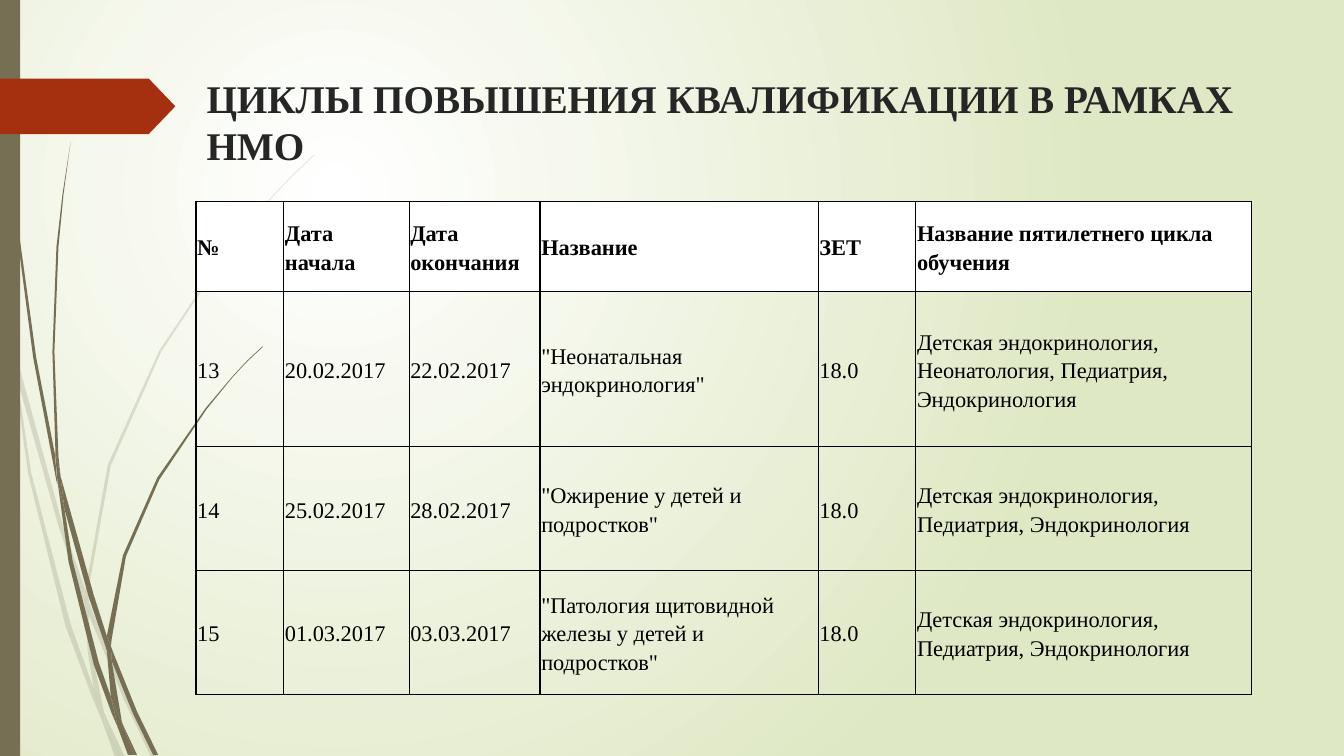
from dataclasses import dataclass
from lxml.etree import SubElement
from pptx import Presentation
from pptx.dml.color import RGBColor
from pptx.enum.shapes import MSO_SHAPE as Shape
from pptx.enum.text import MSO_ANCHOR as Anchor, MSO_AUTO_SIZE as AutoSize, PP_ALIGN as Align
from pptx.oxml import parse_xml
from pptx.oxml.ns import nsdecls, qn
from pptx.util import Cm, Pt

COLORS = {
    "olive": "766F54", "rust": "A53010", "white": "FFFFFF",
    "meadow": "DFE8C4", "black": "000000", "title": "262626",
}
FONT = "Times New Roman"
UNIT = Cm(0.0254)
Outline = list[tuple[int, int]]


@dataclass
class Tuft:
    alpha: int
    blades: list[Outline]


@dataclass
class Column:
    width: float
    cells: list[str]


PALE_TUFT = Tuft(20, [
    [(11, 350), (9, 322), (0, 282), (0, 299), (10, 344)],
    [(14, 345), (17, 376), (58, 522), (84, 599), (85, 586), (62, 520)],
    [(88, 596), (88, 610), (123, 694), (150, 751), (155, 751), (127, 692), (92, 607)],
    [(119, 751), (124, 751), (105, 711)],
    [(11, 350), (17, 376), (31, 469), (70, 619), (93, 683), (99, 707), (101, 714),
     (92, 693), (65, 621), (28, 470)],
    [(84, 599), (87, 646), (93, 683), (96, 692), (105, 711), (103, 706), (91, 646), (88, 610), (88, 608)],
    [(88, 596), (88, 584), (110, 462), (160, 349), (229, 245), (268, 198), (290, 175), (312, 154),
     (312, 153), (289, 175), (268, 197), (228, 244), (158, 348), (107, 461), (85, 584), (85, 586)],
    [(101, 714), (114, 751), (119, 751)],
    [(88, 608), (88, 610), (88, 596), (85, 586), (84, 599)],
    [(93, 683), (99, 707), (101, 714), (119, 751), (105, 711), (96, 692)],
])

DARK_TUFT = Tuft(100, [
    [(3, 0), (4, 48), (7, 110), (17, 233), (33, 355), (56, 477), (57, 481),
     (55, 457), (55, 453), (36, 355), (19, 232), (8, 109), (5, 48), (4, 0)],
    [(60, 472), (64, 505), (88, 592), (106, 645), (106, 633), (106, 631), (93, 590)],
    [(110, 641), (111, 656), (132, 708), (152, 749), (157, 749), (136, 706), (113, 649)],
    [(57, 477), (64, 505), (72, 556), (98, 657), (110, 691), (116, 717), (117, 722),
     (111, 708), (93, 659), (68, 557)],
    [(60, 472), (58, 453), (54, 349), (58, 245), (63, 193), (70, 141),
     (62, 193), (56, 245), (52, 349), (55, 449)],
    [(133, 749), (136, 749), (122, 719)],
    [(57, 477), (64, 505), (60, 472), (55, 449), (55, 453)],
    [(110, 641), (111, 633), (125, 552), (158, 476), (205, 406), (231, 374), (245, 359), (261, 344),
     (260, 344), (245, 358), (231, 373), (204, 405), (156, 474), (122, 551), (106, 631)],
    [(117, 722), (127, 749), (131, 749)],
    [(106, 645), (110, 691), (116, 706), (122, 719), (121, 716), (111, 656), (109, 651)],
    [(106, 645), (109, 651), (111, 656), (110, 641), (106, 631)],
    [(110, 691), (116, 717), (117, 722), (130, 749), (133, 749), (122, 719), (116, 706)],
])

ROW_HEIGHTS = [2.28, 3.91, 3.12, 3.12]
COLUMNS = [
    Column(2.21, ["№", "13", "14", "15"]),
    Column(3.16, ["Дата начала", "20.02.2017", "25.02.2017", "01.03.2017"]),
    Column(3.3, ["Дата окончания", "22.02.2017", "28.02.2017", "03.03.2017"]),
    Column(7.01, ["Название", '"Неонатальная эндокринология"', '"Ожирение у детей и подростков"',
                  '"Патология щитовидной железы у детей и подростков"']),
    Column(2.46, ["ЗЕТ"] + ["18.0"] * 3),
    Column(8.45, ["Название пятилетнего цикла обучения",
                  "Детская эндокринология, Неонатология, Педиатрия, Эндокринология"]
           + ["Детская эндокринология, Педиатрия, Эндокринология"] * 2),
]


def rgb(name: str) -> RGBColor:
    return RGBColor.from_string(COLORS[name])


def write_text(tf, text: str, *, size: float, bold: bool = False,
               color: str = "black", spacing: float = 1.0) -> None:
    p = tf.paragraphs[0]
    p.alignment = Align.LEFT
    p.line_spacing = spacing
    r = p.add_run()
    r.text = text
    r.font.name = FONT
    r.font.size = Pt(size)
    r.font.bold = bold
    r.font.color.rgb = rgb(color)


def paint(sp, color: str, alpha: int = 100) -> None:
    sp.shadow.inherit = False
    sp.line.fill.background()
    sp.fill.solid()
    sp.fill.fore_color.rgb = rgb(color)
    if alpha < 100:
        clr = sp._element.spPr.find(qn("a:solidFill"))[0]
        SubElement(clr, qn("a:alpha")).set("val", str(alpha * 1000))


def draw_tuft(s, tuft: Tuft) -> None:
    group = s.shapes.add_group_shape()
    for blade in tuft.blades:
        builder = group.shapes.build_freeform(*blade[0], scale=UNIT)
        builder.add_line_segments(blade[1:], close=True)
        paint(builder.convert_to_shape(), "olive", tuft.alpha)


def draw_background(s) -> None:
    fill = s.background.fill
    fill.gradient()
    for stop, color in zip(fill.gradient_stops, ("white", "meadow")):
        stop.color.rgb = rgb(color)
    lin = next(s._element.iter(qn("a:lin")))
    lin.getparent().replace(lin, parse_xml(
        f'<a:path {nsdecls("a")} path="circle">'
        '<a:fillToRect l="50000" t="50000" r="100000" b="100000"/></a:path>'))


def draw_borders(cell) -> None:
    tc_pr = cell._tc.get_or_add_tcPr()
    for i, side in enumerate("LRTB"):
        tc_pr.insert(i, parse_xml(
            f'<a:ln{side} {nsdecls("a")} w="{Pt(1)}"><a:solidFill>'
            f'<a:srgbClr val="{COLORS["black"]}"/></a:solidFill></a:ln{side}>'))


def draw_table(s) -> None:
    width = sum(column.width for column in COLUMNS)
    table = s.shapes.add_table(len(ROW_HEIGHTS), len(COLUMNS), Cm(4.94), Cm(5.07),
                               Cm(width), Cm(sum(ROW_HEIGHTS))).table
    table.first_row = table.horz_banding = False
    for row, height in zip(table.rows, ROW_HEIGHTS):
        row.height = Cm(height)
    for j, column in enumerate(COLUMNS):
        table.columns[j].width = Cm(column.width)
        for i, text in enumerate(column.cells):
            cell = table.cell(i, j)
            cell.margin_left = cell.margin_right = Cm(0.03)
            cell.margin_top = cell.margin_bottom = 0
            cell.vertical_anchor = Anchor.MIDDLE
            if i == 0:
                cell.fill.solid()
                cell.fill.fore_color.rgb = rgb("white")
            else:
                cell.fill.background()
            draw_borders(cell)
            write_text(cell.text_frame, text, size=16, bold=i == 0, spacing=1.15)


def draw_title(s) -> None:
    title = s.shapes.title
    title.left, title.top, title.width, title.height = Cm(4.95), Cm(1.75), Cm(27), Cm(3.56)
    tf = title.text_frame
    tf.word_wrap = True
    tf.auto_size = AutoSize.NONE
    tf.vertical_anchor = Anchor.TOP
    write_text(tf, "ЦИКЛЫ ПОВЫШЕНИЯ КВАЛИФИКАЦИИ В РАМКАХ НМО", size=28, bold=True, color="title")


def main() -> None:
    prs = Presentation()
    prs.slide_width, prs.slide_height = Cm(33.87), Cm(19.05)
    s = prs.slides.add_slide(prs.slide_layouts[5])
    draw_background(s)
    draw_tuft(s, PALE_TUFT)
    draw_tuft(s, DARK_TUFT)
    paint(s.shapes.add_shape(Shape.RECTANGLE, 0, 0, Cm(0.51), prs.slide_height), "olive")
    arrow = s.shapes.add_shape(Shape.PENTAGON, 0, Cm(1.98), Cm(4.42), Cm(1.4))
    arrow.adjustments[0] = 0.48
    paint(arrow, "rust")
    draw_table(s)
    draw_title(s)
    prs.save("out.pptx")


if __name__ == "__main__":
    main()
